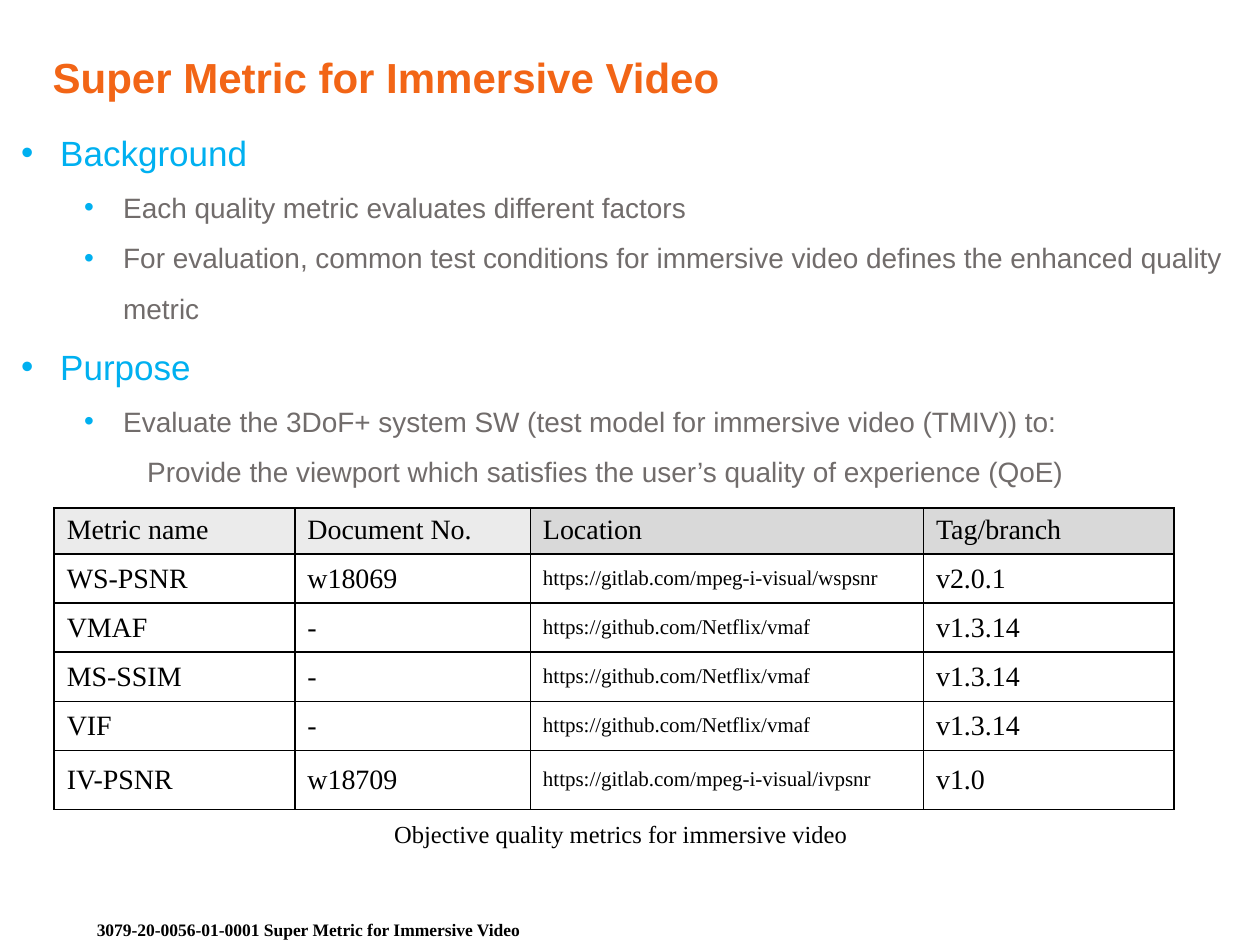
from lxml.etree import SubElement as Sub
from pptx import Presentation
from pptx.dml.color import RGBColor as RGB
from pptx.enum.text import MSO_ANCHOR as Anchor, PP_ALIGN as Align
from pptx.oxml.ns import qn
from pptx.util import Inches, Pt

SANS, SERIF = "Arial", "Times New Roman"
ORANGE = RGB(0xF2, 0x65, 0x16)
BLUE = RGB(0x00, 0xB0, 0xF0)
GRAY = RGB(0x71, 0x6C, 0x6B)
BLACK = RGB(0x00, 0x00, 0x00)
WHITE = RGB(0xFF, 0xFF, 0xFF)
DARK = RGB(0xD9, 0xD9, 0xD9)
LIGHT = RGB(0xEB, 0xEB, 0xEB)

TITLE = "Super Metric for Immersive Video"
CAPTION = "Objective quality metrics for immersive video"
FOOTER = "3079-20-0056-01-0001 Super Metric for Immersive Video"
POINTS = [
    (0, "Background"),
    (1, "Each quality metric evaluates different factors"),
    (1, "For evaluation, common test conditions for immersive video "
        "defines the enhanced quality metric"),
    (0, "Purpose"),
    (1, "Evaluate the 3DoF+ system SW (test model for immersive video (TMIV)) to:"),
    (2, "Provide the viewport which satisfies the user’s quality of experience (QoE)"),
]
LEVELS = [(0.31, -0.31, 20, BLUE), (0.81, -0.31, 16, GRAY), (1, 0, 16, GRAY)]
ROWS = [
    ("Metric name", "Document No.", "Location", "Tag/branch"),
    ("WS-PSNR", "w18069", "https://gitlab.com/mpeg-i-visual/wspsnr", "v2.0.1"),
    ("VMAF", "-", "https://github.com/Netflix/vmaf", "v1.3.14"),
    ("MS-SSIM", "-", "https://github.com/Netflix/vmaf", "v1.3.14"),
    ("VIF", "-", "https://github.com/Netflix/vmaf", "v1.3.14"),
    ("IV-PSNR", "w18709", "https://gitlab.com/mpeg-i-visual/ivpsnr", "v1.0"),
]
WIDTHS = [1.91, 1.87, 3.12, 1.99]
HEIGHTS = [0.33] + [0.39] * 5


def style(para, face, size, color, bold=False):
    font = para.font
    font.name, font.size, font.bold = face, Pt(size), bold
    font.color.rgb = color


def add_box(slide, box, wrap=True):
    frame = slide.shapes.add_textbox(*map(Inches, box)).text_frame
    frame.word_wrap = wrap
    return frame


def add_line(slide, box, text, face, size, color, bold=False, wrap=True):
    frame = add_box(slide, box, wrap)
    frame.text = text
    frame.vertical_anchor = Anchor.MIDDLE
    style(frame.paragraphs[0], face, size, color, bold)
    return frame


def add_points(slide):
    frame = add_box(slide, (0.07, 0.83, 9.93, 3.48))
    for i, (level, text) in enumerate(POINTS):
        para = frame.paragraphs[0] if i == 0 else frame.add_paragraph()
        left, hang, size, color = LEVELS[level]
        para.text = text
        para.level = level
        para.line_spacing = 1.5
        props = para._p.get_or_add_pPr()
        props.set("marL", str(Inches(left)))
        props.set("indent", str(Inches(hang)))
        if hang:
            Sub(Sub(props, qn("a:buClr")), qn("a:srgbClr"), val=str(BLUE))
            Sub(props, qn("a:buFont"), typeface=SANS)
            Sub(props, qn("a:buChar"), char="•")
        else:
            Sub(props, qn("a:buNone"))
        style(para, SANS, size, color)


def add_border(cell):
    props = cell._tc.get_or_add_tcPr()
    for i, side in enumerate(("lnL", "lnR", "lnT", "lnB")):
        line = props.makeelement(qn("a:" + side), {"w": str(Pt(1))})
        Sub(Sub(line, qn("a:solidFill")), qn("a:srgbClr"), val=str(BLACK))
        props.insert(i, line)


def add_grid(slide):
    area = map(Inches, (0.43, 4.03, sum(WIDTHS), sum(HEIGHTS)))
    table = slide.shapes.add_table(len(ROWS), len(WIDTHS), *area).table
    for col, width in zip(table.columns, WIDTHS):
        col.width = Inches(width)
    for r, (row, height) in enumerate(zip(ROWS, HEIGHTS)):
        table.rows[r].height = Inches(height)
        for c, text in enumerate(row):
            cell = table.cell(r, c)
            cell.text = text
            cell.fill.solid()
            head = LIGHT if c < 2 else DARK
            cell.fill.fore_color.rgb = WHITE if r else head
            cell.vertical_anchor = Anchor.MIDDLE if r else Anchor.TOP
            if r == len(ROWS) - 1 and c > 1:
                cell.margin_top = cell.margin_bottom = Inches(0.1)
            para = cell.text_frame.paragraphs[0]
            para.alignment = Align.JUSTIFY
            style(para, SERIF, 12 if r and c == 2 else 16, BLACK)
            add_border(cell)


def main():
    deck = Presentation()
    deck.slide_width, deck.slide_height = Inches(10), Inches(7.5)
    slide = deck.slides.add_slide(deck.slide_layouts[6])
    add_points(slide)
    add_line(slide, (0.32, 0.3, 9.26, 0.62), TITLE, SANS, 24, ORANGE, True)
    add_line(slide, (3.03, 6.45, 3.83, 0.34), CAPTION, SERIF, 14, BLACK, wrap=False)
    add_grid(slide)
    add_line(slide, (0.67, 7.25, 7.96, 0.25), FOOTER, SERIF, 10, BLACK, True)
    deck.save("out.pptx")


if __name__ == "__main__":
    main()
